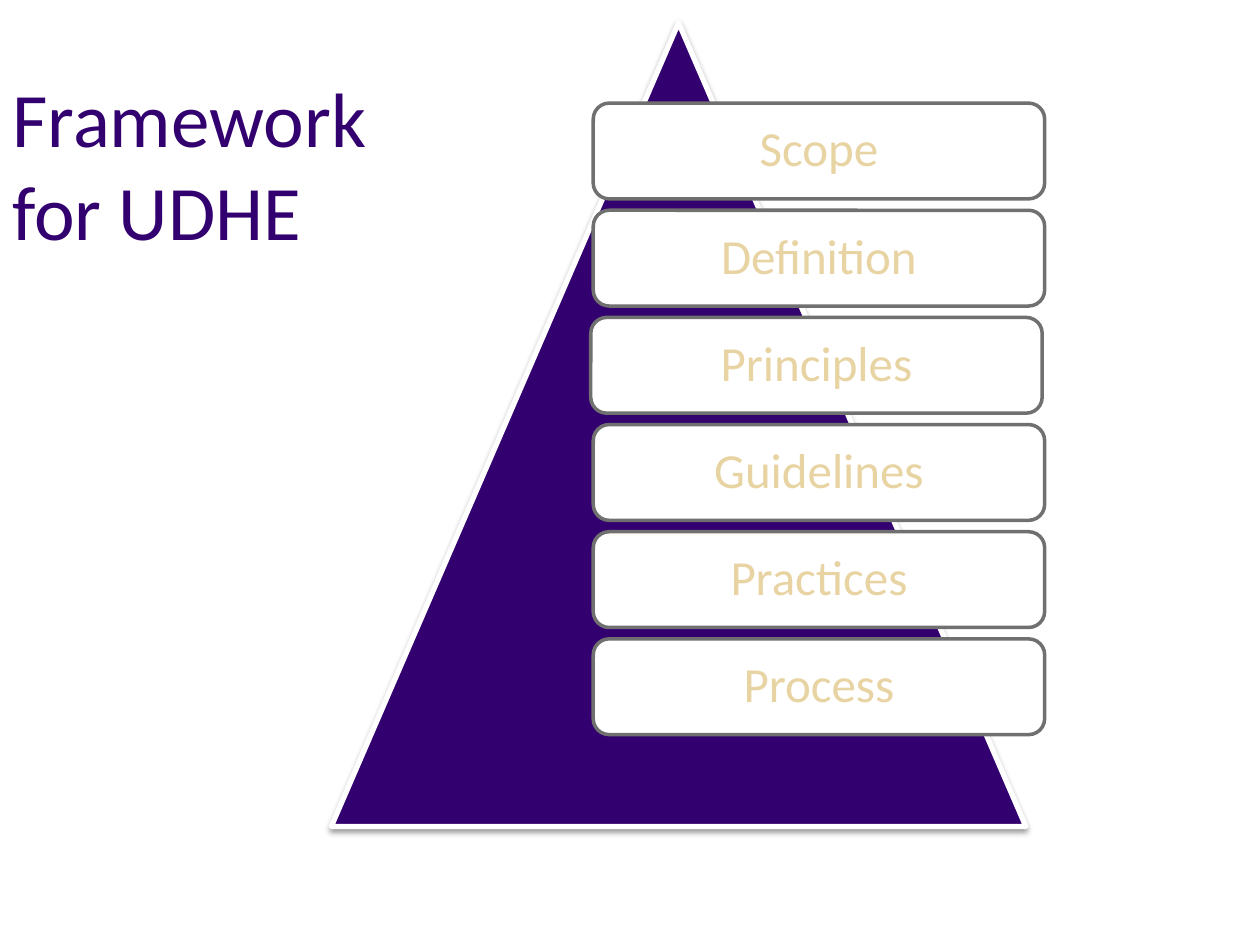
from lxml import etree
from pptx import Presentation
from pptx.dml.color import RGBColor
from pptx.enum.shapes import MSO_SHAPE
from pptx.enum.text import MSO_ANCHOR, PP_ALIGN
from pptx.oxml.ns import qn
from pptx.util import Cm, Pt

TRIANGLE = MSO_SHAPE.ISOSCELES_TRIANGLE
ROUNDED = MSO_SHAPE.ROUNDED_RECTANGLE
MIDDLE = MSO_ANCHOR.MIDDLE
LEFT, CENTER = PP_ALIGN.LEFT, PP_ALIGN.CENTER

FONT = "Calibri"
PURPLE, GOLD, WHITE, GREY = "33006F", "E8D3A2", "FFFFFF", "707070"
LEVELS = ["Scope", "Definition", "Principles", "Guidelines", "Practices", "Process"]
NUDGES = {"Principles": -0.05}  # horizontal offsets in cm


def colour(value):
    return RGBColor.from_string(value)


def write(shape, text, size, hue, align):
    frame = shape.text_frame
    frame.word_wrap = True
    frame.vertical_anchor = MIDDLE
    para = frame.paragraphs[0]
    para.alignment = align
    span = para.add_run()
    span.text = text
    span.font.name = FONT
    span.font.size = Pt(size)
    span.font.color.rgb = colour(hue)
    return para


def add_block(shapes, preset, box, fill, line, width):
    left, top, wide, high = box
    block = shapes.add_shape(preset, Cm(left), Cm(top), Cm(wide), Cm(high))
    block.shadow.inherit = False
    block.fill.solid()
    block.fill.fore_color.rgb = colour(fill)
    block.line.color.rgb = colour(line)
    block.line.width = Pt(width)
    return block


def add_soft_shadow(shape):
    effects = shape.element.spPr.find(qn("a:effectLst"))
    shadow = etree.SubElement(
        effects, qn("a:outerShdw"), blurRad=str(Pt(3.1)), dist=str(Pt(1.6)),
        dir="5400000", rotWithShape="0")
    black = etree.SubElement(shadow, qn("a:srgbClr"), val="000000")
    etree.SubElement(black, qn("a:alpha"), val="38000")


def add_title(page, box):
    left, top, wide, high = box
    title = page.shapes.add_textbox(Cm(left), Cm(top), Cm(wide), Cm(high))
    write(title, "Framework for UDHE", 44, PURPLE, LEFT)


def add_pyramid(page, box):
    left, top, wide, high = box
    pyramid = page.shapes.add_group_shape()

    # Triangle behind the list
    triangle = add_block(pyramid.shapes, TRIANGLE, box, PURPLE, WHITE, 3)
    add_soft_shadow(triangle)

    # Evenly stacked level labels
    label_wide, label_high, pitch = 0.65 * wide, 1.93, 2.16
    for index, level in enumerate(LEVELS):
        label_left = left + 5.28 + NUDGES.get(level, 0)
        label_top = top + 0.1 * high + index * pitch
        label = add_block(pyramid.shapes, ROUNDED,
                          (label_left, label_top, label_wide, label_high),
                          WHITE, GREY, 2)
        para = write(label, level, 28, GOLD, CENTER)
        para.line_spacing = 0.9


def main():
    deck = Presentation()
    deck.slide_width, deck.slide_height = Cm(25.4), Cm(19.05)
    page = deck.slides.add_slide(deck.slide_layouts[6])
    add_title(page, (0, 1.7, 8.15, 3.18))
    add_pyramid(page, (6.68, 0.46, 14, 16.2))
    deck.save("out.pptx")


if __name__ == "__main__":
    main()
